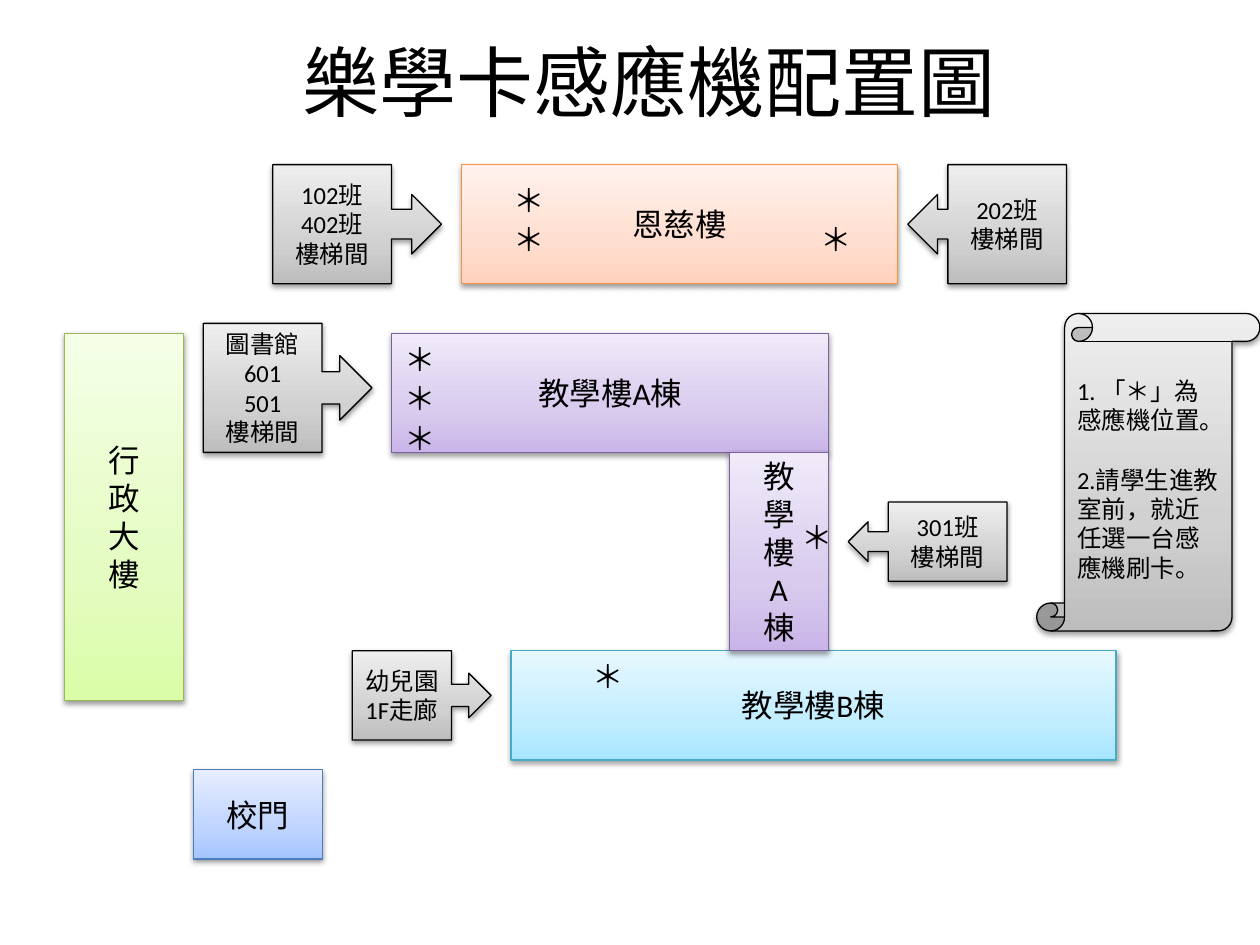
from copy import deepcopy

from pptx import Presentation, util as u
from pptx.dml.color import RGBColor
from pptx.enum import shapes, text
from pptx.oxml import parse_xml
from pptx.oxml.ns import nsdecls, qn

CELL = u.Cm(0.2)             # the plan is drawn on a 2 mm grid
LEFT, TOP = 0.5, 0.6         # grid origin, in cells

# Gradient stops from bottom to top, then the outline
COLORS = {
    "blue": ("A4C4FF", "BFD4FF", "E6EEFF", "4B7EBC"),
    "green": ("DAFDA7", "E4FCC2", "F5FFE7", "98B955"),
    "aqua": ("A7E6FF", "C1EDFF", "E7F8FF", "46AAC5"),
    "purple": ("C9B5E8", "D8CBEE", "F0EAF9", "7D60A0"),
    "orange": ("FFD2BD", "FFDED0", "FFF2ED", "F69240"),
    "gray": ("BDBDBD", "D1D1D1", "EEEEEE", "000000"),
    "text": "000000",
}
STOPS = (0, 0.35, 1)

# Column, row, columns, rows, colour, lines
BUILDINGS = [
    (19, 77, 13, 9, "blue", ["校門"]),
    (6, 33, 12, 37, "green", list("行政大樓")),
    (51, 65, 61, 11, "aqua", ["教學樓B棟"]),
    (39, 33, 44, 12, "purple", ["教學樓A棟"]),
    (73, 45, 10, 20, "purple", list("教學樓A棟")),
    (46, 16, 44, 12, "orange", ["恩慈樓"]),
]

RIGHT = shapes.MSO_SHAPE.RIGHT_ARROW_CALLOUT
LEFTWARD = shapes.MSO_SHAPE.LEFT_ARROW_CALLOUT
# Column, row, columns, rows, preset, share taken by the box, lines
CALLOUTS = [
    (35, 65, 14, 9, RIGHT, 0.716, ["幼兒園1F走廊"]),
    (85, 50, 16, 8, LEFTWARD, 0.747, ["301班", "樓梯間"]),
    (20, 32, 17, 13, RIGHT, 0.704, ["圖書館", "601", "501", "樓梯間"]),
    (27, 16, 17, 12, RIGHT, 0.704, ["102班", "402班", "樓梯間"]),
    (91, 16, 16, 12, LEFTWARD, 0.747, ["202班", "樓梯間"]),
]

READERS = [(58, 65), (79, 51), (39, 41), (39, 37), (39, 33),
           (50, 21), (50, 17), (81, 21)]

RULES = ["1. 「＊」為 感應機位置。",
         "2.請學生進教室前，就近任選一台感應機刷卡。"]


def place(column, row, columns, rows):
    """Turn grid cells into left, top, width and height."""
    cells = (column + LEFT, row + TOP, columns, rows)
    return [round(CELL * count) for count in cells]


def write(shape, lines, size, align=text.PP_ALIGN.CENTER, font="Calibri",
          anchor=text.MSO_ANCHOR.MIDDLE, wrap=True, gap=0):
    frame = shape.text_frame
    frame.word_wrap = wrap
    frame.vertical_anchor = anchor
    frame.text = "\n".join(lines)
    for index, para in enumerate(frame.paragraphs):
        para.alignment = align
        if index and gap:
            para.space_before = u.Pt(gap)
        para.font.size = u.Pt(size)
        para.font.name = font
        para.font.color.rgb = RGBColor.from_string(COLORS["text"])


def add_shadow(shape):
    shape.shadow.inherit = False
    shape._element.spPr.find(qn("a:effectLst")).append(parse_xml(
        f'<a:outerShdw {nsdecls("a")} blurRad="40000" dist="20000" '
        'dir="5400000" rotWithShape="0"><a:srgbClr val="000000">'
        '<a:alpha val="38000"/></a:srgbClr></a:outerShdw>'))


def add_block(page, preset, area, color):
    """Add a shape with a three-stop vertical gradient and a soft shadow."""
    shape = page.shapes.add_shape(preset, *place(*area))
    *shades, outline = COLORS[color]
    shape.fill.gradient()
    shape.fill.gradient_angle = 90
    stop_list = shape._element.spPr.find(qn("a:gradFill")).find(qn("a:gsLst"))
    stop_list.append(deepcopy(stop_list[0]))
    for stop, position, shade in zip(shape.fill.gradient_stops, STOPS, shades):
        stop.position = position
        stop.color.rgb = RGBColor.from_string(shade)
    shape.line.color.rgb = RGBColor.from_string(outline)
    shape.line.width = u.Pt(0.75)
    add_shadow(shape)
    return shape


def add_building(page, *area, color, lines):
    block = add_block(page, shapes.MSO_SHAPE.RECTANGLE, area, color)
    write(block, lines, 18)


def add_callout(page, *area, preset, share, lines):
    block = add_block(page, preset, area, "gray")
    block.adjustments[3] = share
    write(block, lines, 14)


def add_title(page, title):
    box = page.shapes.add_textbox(*place(11, 2, 108, 11))
    write(box, [title], 44, font="Noto Sans CJK SC")


def add_reader(page, column, row):
    """Mark the place of one card reader."""
    box = page.shapes.add_textbox(*place(column, row, 5.7, 5.1))
    write(box, ["＊"], 18, text.PP_ALIGN.LEFT,
          anchor=text.MSO_ANCHOR.TOP, wrap=False)


def add_rules(page):
    scroll = add_block(page, shapes.MSO_SHAPE.VERTICAL_SCROLL,
                       (104, 31, 22.5, 32), "gray")
    write(scroll, RULES, 14, text.PP_ALIGN.LEFT, gap=17)


def main():
    deck = Presentation()
    deck.slide_width, deck.slide_height = u.Inches(10), u.Inches(7.5)
    page = deck.slides.add_slide(deck.slide_layouts[6])
    for *area, color, lines in BUILDINGS:
        add_building(page, *area, color=color, lines=lines)
    for *area, preset, share, lines in CALLOUTS:
        add_callout(page, *area, preset=preset, share=share, lines=lines)
    add_title(page, "樂學卡感應機配置圖")
    for column, row in READERS:
        add_reader(page, column, row)
    add_rules(page)
    deck.save("out.pptx")


if __name__ == "__main__":
    main()
